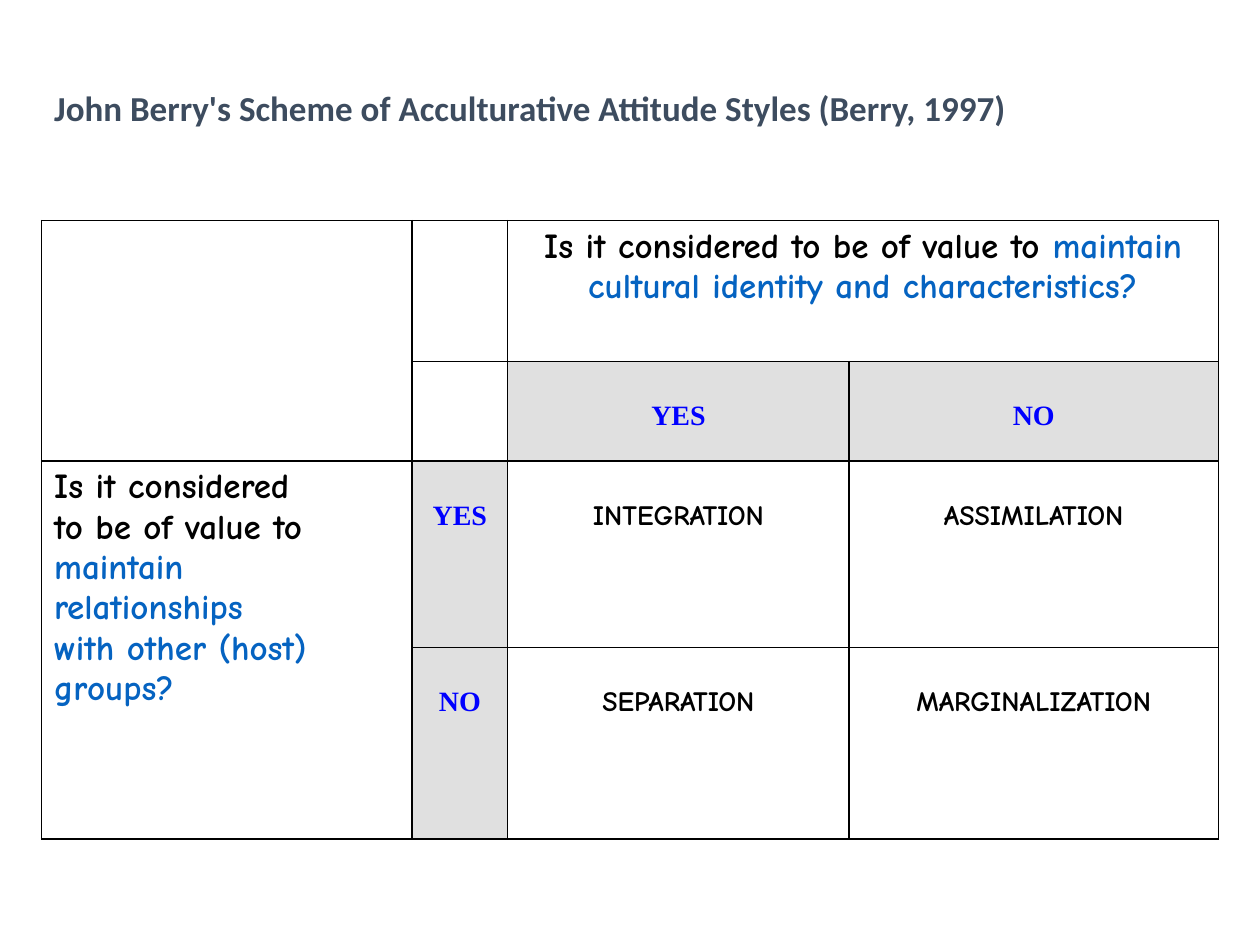
"""Builds a slide with Berry's two-by-two table of acculturative attitude styles."""
from lxml import etree
from pptx import Presentation
from pptx.dml.color import RGBColor
from pptx.enum.text import MSO_ANCHOR, PP_ALIGN
from pptx.oxml.ns import qn
from pptx.util import Inches, Pt

LEFT, CENTER = PP_ALIGN.LEFT, PP_ALIGN.CENTER
TOP, MIDDLE = MSO_ANCHOR.TOP, MSO_ANCHOR.MIDDLE
TITLE_ONLY = 5

COLORS = {"title": "3D4C5F", "text": "000000", "accent": "0563C1",
          "answer": "0000FF", "shade": "E0E0E0", "border": "000000"}
STYLES = {
    "title": {"name": "Calibri", "size": Pt(20), "bold": True},
    "question": {"name": "Comic Neue", "size": Pt(20), "bold": True},
    "answer": {"name": "Times New Roman", "size": Pt(16), "bold": True},
    "outcome": {"name": "Comic Neue", "size": Pt(16), "bold": True},
}

TITLE = "John Berry's Scheme of Acculturative Attitude Styles (Berry, 1997)"
IDENTITY_QUESTION = [
    ("Is it considered to be of value to ", "text"),
    ("maintain cultural identity and characteristics?", "accent"),
]
GROUPS_QUESTION = [
    ("Is it considered \nto be of value to ", "text"),
    ("maintain \nrelationships\nwith other (host) \ngroups?", "accent"),
]
ANSWERS = ["YES", "NO"]
OUTCOMES = [["INTEGRATION", "ASSIMILATION"], ["SEPARATION", "MARGINALIZATION"]]

COLUMN_WIDTHS = [2.94, 0.76, 2.71, 2.93]
ROW_HEIGHTS = [1.12, 0.79, 1.48, 1.52]
MERGES = [((0, 0), (1, 0)), ((0, 2), (0, 3)), ((2, 0), (3, 0))]
LABEL_MARGIN = 0.31


def write(para, spans, style, align):
    para.alignment = align
    for text, color in spans:
        for index, line in enumerate(text.split("\n")):
            if index:
                para.add_line_break()
            span = para.add_run()
            span.text = line
            for name, value in STYLES[style].items():
                setattr(span.font, name, value)
            span.font.color.rgb = RGBColor.from_string(COLORS[color])


def add_borders(cell):
    properties = cell._tc.get_or_add_tcPr()
    for side in ("a:lnL", "a:lnR", "a:lnT", "a:lnB"):
        line = etree.SubElement(properties, qn(side), w=str(Pt(1)))
        fill = etree.SubElement(line, qn("a:solidFill"))
        etree.SubElement(fill, qn("a:srgbClr"), val=COLORS["border"])


def fill_label(cell, text, style, color):
    cell.margin_top = Inches(LABEL_MARGIN)
    write(cell.text_frame.paragraphs[0], [(text, color)], style, CENTER)


def fill_answer(cell, text):
    fill_label(cell, text, "answer", "answer")
    cell.fill.solid()
    cell.fill.fore_color.rgb = RGBColor.from_string(COLORS["shade"])


def add_title(page):
    title = page.shapes.title
    box = {"left": 0.33, "top": 0.25, "width": 9.5, "height": 1.25}
    for name, value in box.items():
        setattr(title, name, Inches(value))
    title.text_frame.vertical_anchor = MIDDLE
    para = title.text_frame.paragraphs[0]
    para.line_spacing = 0.9
    write(para, [(TITLE, "title")], "title", LEFT)


def add_scheme(page):
    table = page.shapes.add_table(
        len(ROW_HEIGHTS), len(COLUMN_WIDTHS), Inches(0.33), Inches(1.75),
        Inches(sum(COLUMN_WIDTHS)), Inches(sum(ROW_HEIGHTS))).table
    table.first_row = table.horz_banding = False
    for column, width in zip(table.columns, COLUMN_WIDTHS):
        column.width = Inches(width)
    for row, height in zip(table.rows, ROW_HEIGHTS):
        row.height = Inches(height)
    for cell in table.iter_cells():
        add_borders(cell)
        cell.fill.background()
        cell.vertical_anchor = TOP
    for first, last in MERGES:
        table.cell(*first).merge(table.cell(*last))

    write(table.cell(0, 2).text_frame.paragraphs[0], IDENTITY_QUESTION, "question", CENTER)
    write(table.cell(2, 0).text_frame.paragraphs[0], GROUPS_QUESTION, "question", LEFT)
    for index, answer in enumerate(ANSWERS, start=2):
        fill_answer(table.cell(1, index), answer)
        fill_answer(table.cell(index, 1), answer)
    for row, outcomes in enumerate(OUTCOMES, start=2):
        for column, outcome in enumerate(outcomes, start=2):
            fill_label(table.cell(row, column), outcome, "outcome", "text")


def main():
    deck = Presentation()
    deck.slide_width, deck.slide_height = Inches(10), Inches(7.5)
    page = deck.slides.add_slide(deck.slide_layouts[TITLE_ONLY])
    add_title(page)
    add_scheme(page)
    deck.save("out.pptx")


if __name__ == "__main__":
    main()
